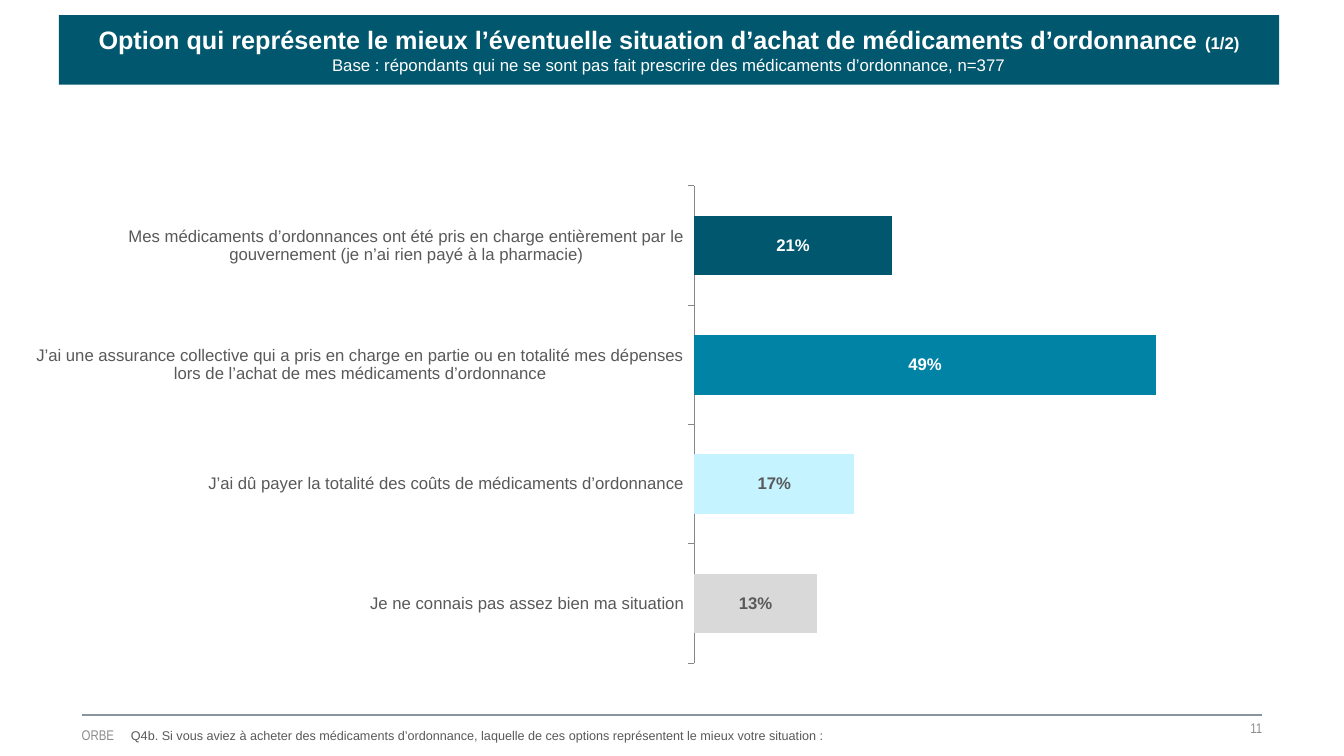
from dataclasses import dataclass

from lxml import etree
from pptx import Presentation
from pptx import util as u
from pptx.chart.data import CategoryChartData
from pptx.dml.color import RGBColor
from pptx.enum import chart as ch, shapes, text
from pptx.oxml import ns


class Theme:
    petrol, teal, ice, silver = "00576E", "0083A5", "C5F3FF", "D9D9D9"
    white, ink, muted, rule, axis = "FFFFFF", "595959", "8C8C8C", "88959E", "868686"
    title = dict(size=18, name="Arial", color=white, bold=True)
    counter = dict(title, size=12)
    base = dict(counter, bold=False)
    label = dict(size=12, name="Arial", color=white, bold=True)
    category = dict(size=12, name="Arial", color=ink, bold=False)
    question = dict(size=9, name="Arial", color=ink)
    footer = dict(size=10, name="Arial Narrow", color=muted)


@dataclass
class Box:
    left: float
    top: float
    width: float
    height: float

    def inner(self, left, top, width, height):
        """Return an inner box given in percent of this one."""
        return Box(self.left + self.width * left / 100, self.top + self.height * top / 100,
                   self.width * width / 100, self.height * height / 100)

    @property
    def emu(self):
        return [int(v) for v in (self.left, self.top, self.width, self.height)]


ANSWERS = [
    ("Mes médicaments d’ordonnances ont été pris en charge entièrement par le "
     "gouvernement (je n’ai rien payé à la pharmacie)", 0.21, Theme.petrol, Theme.white),
    ("J’ai une assurance collective qui a pris en charge en partie ou en totalité mes "
     "dépenses lors de l’achat de mes médicaments d’ordonnance", 0.49, Theme.teal, Theme.white),
    ("J’ai dû payer la totalité des coûts de médicaments d’ordonnance",
     0.17, Theme.ice, Theme.ink),
    ("Je ne connais pas assez bien ma situation", 0.13, Theme.silver, Theme.ink),
]


def rgb(value):
    return RGBColor.from_string(value)


def set_font(font, style):
    for key, value in style.items():
        if key == "color":
            font.color.rgb = rgb(value)
        else:
            setattr(font, key, u.Pt(value) if key == "size" else value)


def add_run(p, words, style):
    r = p.add_run()
    r.text = words
    set_font(r.font, style)


def set_frame(tf, **values):
    for key, value in dict(word_wrap=True, **values).items():
        setattr(tf, key, value)


NO_MARGINS = dict.fromkeys(("margin_left", "margin_top", "margin_right", "margin_bottom"), 0)
MIDDLE = dict(NO_MARGINS, vertical_anchor=text.MSO_ANCHOR.MIDDLE)


def add_text(slide, box, words, style, align=text.PP_ALIGN.LEFT, **frame):
    tf = slide.shapes.add_textbox(*box.emu).text_frame
    set_frame(tf, **frame)
    p = tf.paragraphs[0]
    p.alignment = align
    add_run(p, words, style)


def header(slide, box):
    sp = slide.shapes.add_shape(shapes.MSO_SHAPE.RECTANGLE, *box.emu)
    sp.shadow.inherit = False
    sp.fill.solid()
    sp.fill.fore_color.rgb = rgb(Theme.petrol)
    sp.line.fill.background()
    set_frame(sp.text_frame, **MIDDLE)
    p = sp.text_frame.paragraphs[0]
    p.alignment = text.PP_ALIGN.CENTER
    add_run(p, "Option qui représente le mieux l’éventuelle situation d’achat de "
               "médicaments d’ordonnance ", Theme.title)
    add_run(p, "(1/2)", Theme.counter)
    p.add_line_break()
    add_run(p, "Base : répondants qui ne se sont pas fait prescrire des médicaments "
               "d’ordonnance, n=377", Theme.base)


def set_plot_area(chart, **percents):
    """Fix the inner plot area, in percent of the chart."""
    area = chart.plots[0]._element.getparent()
    for old in area.findall(ns.qn("c:layout")):
        area.remove(old)
    layout = etree.Element(ns.qn("c:layout"))
    manual = etree.SubElement(layout, ns.qn("c:manualLayout"))
    values = dict(layoutTarget="inner", xMode="edge", yMode="edge")
    values.update((tag, percent / 100) for tag, percent in percents.items())
    for tag, value in values.items():
        etree.SubElement(manual, ns.qn("c:" + tag)).set("val", str(value))
    area.insert(0, layout)


def answers_chart(slide, box):
    data = CategoryChartData(number_format="0%")
    data.categories = [answer[0] for answer in ANSWERS]
    data.add_series("Series 1", [answer[1] for answer in ANSWERS])
    chart = slide.shapes.add_chart(ch.XL_CHART_TYPE.BAR_CLUSTERED, *box.emu, data).chart
    chart.has_legend = chart.has_title = False
    set_font(chart.font, Theme.category)

    axis = chart.category_axis
    axis.reverse_order = True
    axis.has_major_gridlines = False
    axis.major_tick_mark = ch.XL_TICK_MARK.OUTSIDE
    axis.format.line.color.rgb = rgb(Theme.axis)
    set_font(axis.tick_labels.font, Theme.category)
    scale = chart.value_axis
    scale.minimum_scale, scale.maximum_scale = 0, 0.6
    scale.has_major_gridlines = scale.visible = False

    plot = chart.plots[0]
    plot.gap_width, plot.vary_by_categories = 100, False
    series = plot.series[0]
    series.format.fill.solid()
    series.format.fill.fore_color.rgb = rgb(Theme.petrol)
    labels = series.data_labels
    labels.show_value = True
    labels.number_format, labels.number_format_is_linked = "0%", False
    labels.position = ch.XL_LABEL_POSITION.CENTER
    set_font(labels.font, Theme.label)
    for i, (_, _, fill, ink) in enumerate(ANSWERS):
        point = series.points[i]
        point.format.fill.solid()
        point.format.fill.fore_color.rgb = rgb(fill)
        set_font(point.data_label.font, dict(Theme.label, color=ink))
        point.data_label.position = ch.XL_LABEL_POSITION.CENTER
    set_plot_area(chart, x=53.6, y=3.5, w=46.4, h=90.8)


def footer(slide, box):
    left, top, width, _ = box.emu
    line = slide.shapes.add_connector(shapes.MSO_CONNECTOR.STRAIGHT,
                                      left, top, left + width, top)
    line.line.color.rgb = rgb(Theme.rule)
    line.line.width = u.Pt(1.5)
    etree.SubElement(line._element.spPr, ns.qn("a:effectLst"))
    add_text(slide, box.inner(68, 0, 32, 79), "11", Theme.footer,
             text.PP_ALIGN.RIGHT, **MIDDLE)
    add_text(slide, box.inner(0, 21, 32, 79), "ORBE", Theme.footer, **MIDDLE)
    add_text(slide, box.inner(3.33, 24, 96.5, 76),
             "Q4b. Si vous aviez à acheter des médicaments d’ordonnance, laquelle de ces "
             "options représentent le mieux votre situation :", Theme.question)


def main():
    prs = Presentation()
    prs.slide_width, prs.slide_height = u.Inches(13.33), u.Inches(7.5)
    slide = prs.slides.add_slide(prs.slide_layouts[6])
    page = Box(0, 0, prs.slide_width, prs.slide_height)
    footer(slide, page.inner(6.08, 94.53, 87.83, 4.4))
    answers_chart(slide, page.inner(2.7, 22.13, 91, 69.6))
    header(slide, page.inner(4.38, 2, 90.8, 9.2))
    prs.save("out.pptx")


if __name__ == "__main__":
    main()
